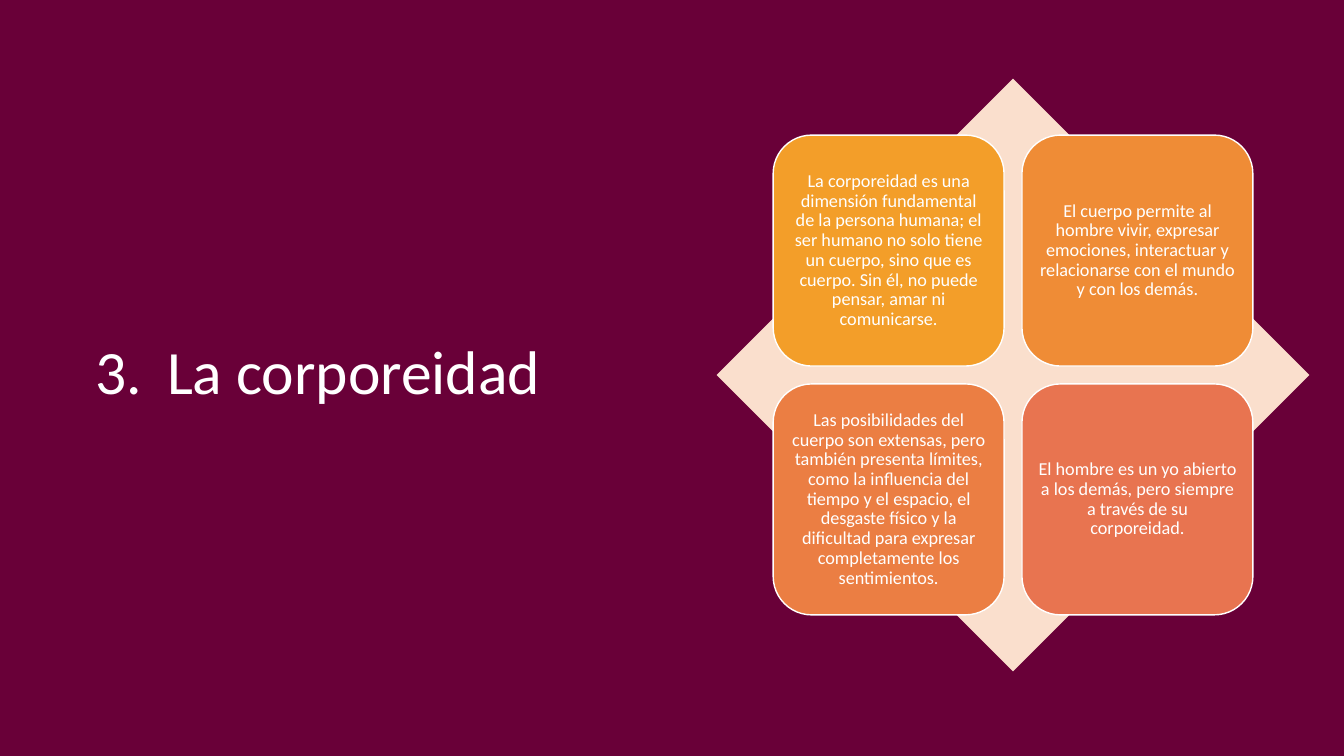
from dataclasses import dataclass

from lxml.etree import SubElement
from pptx import Presentation
from pptx.dml.color import RGBColor
from pptx.enum.shapes import MSO_SHAPE
from pptx.enum.text import MSO_ANCHOR, PP_ALIGN
from pptx.oxml.ns import qn
from pptx.util import Cm, Pt


@dataclass(frozen=True)
class Theme:
    font: str = "Calibri"
    title_size: int = 44
    card_size: int = 13
    white: str = "FFFFFF"
    backdrop: str = "420023"
    wine: str = "6E003B"
    diamond: str = "FADFCD"
    cards: tuple = ("F39E29", "EF8C36", "EB7E43", "E87450")


THEME = Theme()
SLIDE_WIDTH, SLIDE_HEIGHT = 33.87, 19.05
DIAMOND_LEFT, DIAMOND_TOP, DIAMOND_SIDE = 18.06, 1.98, 14.94
CARD_SIDE, CARD_GAP = 5.82, 0.45
CARD_INSET = 0.13

IDEAS = (
    "La corporeidad es una dimensión fundamental de la persona humana; el ser humano "
    "no solo tiene un cuerpo, sino que es cuerpo. Sin él, no puede pensar, amar ni comunicarse.",
    "El cuerpo permite al hombre vivir, expresar emociones, interactuar y relacionarse "
    "con el mundo y con los demás.",
    "Las posibilidades del cuerpo son extensas, pero también presenta límites, como la "
    "influencia del tiempo y el espacio, el desgaste físico y la dificultad para expresar "
    "completamente los sentimientos.",
    "El hombre es un yo abierto a los demás, pero siempre a través de su corporeidad.",
)


def add_filled(slide, kind, left, top, width, height, color):
    """Add a flat preset shape without outline; lengths are in centimetres."""
    shape = slide.shapes.add_shape(kind, Cm(left), Cm(top), Cm(width), Cm(height))
    shape.shadow.inherit = False
    shape.fill.solid()
    shape.fill.fore_color.rgb = RGBColor.from_string(color)
    shape.line.fill.background()
    return shape


def write(frame, words, size, align):
    """Fill a text frame with one white, vertically centred paragraph."""
    frame.word_wrap = True
    frame.vertical_anchor = MSO_ANCHOR.MIDDLE
    paragraph = frame.paragraphs[0]
    paragraph.alignment = align
    paragraph.line_spacing = 0.9
    run = paragraph.add_run()
    run.text = words
    run.font.name = THEME.font
    run.font.size = Pt(size)
    run.font.color.rgb = RGBColor.from_string(THEME.white)
    return paragraph


def add_backdrop(slide):
    slide.background.fill.solid()
    slide.background.fill.fore_color.rgb = RGBColor.from_string(THEME.backdrop)
    veil = add_filled(slide, MSO_SHAPE.RECTANGLE, 0, 0, SLIDE_WIDTH, SLIDE_HEIGHT, THEME.wine)
    color = veil.fill._xPr.find(f".//{qn('a:srgbClr')}")
    SubElement(color, qn("a:alpha"), val="90000")


def add_title(slide, words):
    """Add the title; a hanging indent sets the gap after its number."""
    title = slide.shapes.add_textbox(Cm(2.16), Cm(1.37), Cm(14.02), Cm(16.15))
    paragraph = write(title.text_frame, words, THEME.title_size, PP_ALIGN.LEFT)
    properties = paragraph._p.get_or_add_pPr()
    properties.set("marL", str(Cm(1.8)))
    properties.set("indent", str(-Cm(1.8)))


def add_card(slide, left, top, color, idea):
    card = add_filled(slide, MSO_SHAPE.ROUNDED_RECTANGLE, left, top, CARD_SIDE, CARD_SIDE, color)
    card.line.color.rgb = RGBColor.from_string(THEME.white)
    card.line.width = Pt(1)
    frame = card.text_frame
    frame.margin_left = frame.margin_right = Cm(CARD_INSET)
    frame.margin_top = frame.margin_bottom = Cm(CARD_INSET)
    write(frame, idea, THEME.card_size, PP_ALIGN.CENTER)


def add_matrix(slide):
    """Centre a two by two grid of cards on the diamond."""
    add_filled(slide, MSO_SHAPE.DIAMOND, DIAMOND_LEFT, DIAMOND_TOP,
               DIAMOND_SIDE, DIAMOND_SIDE, THEME.diamond)
    margin = (DIAMOND_SIDE - 2 * CARD_SIDE - CARD_GAP) / 2
    pitch = CARD_SIDE + CARD_GAP
    for index, (color, idea) in enumerate(zip(THEME.cards, IDEAS)):
        row, column = divmod(index, 2)
        add_card(slide, DIAMOND_LEFT + margin + column * pitch,
                 DIAMOND_TOP + margin + row * pitch, color, idea)


def main():
    presentation = Presentation()
    presentation.slide_width = Cm(SLIDE_WIDTH)
    presentation.slide_height = Cm(SLIDE_HEIGHT)
    slide = presentation.slides.add_slide(presentation.slide_layouts[6])
    add_backdrop(slide)
    add_title(slide, "3.\tLa corporeidad")
    add_matrix(slide)
    presentation.save("out.pptx")


if __name__ == "__main__":
    main()
